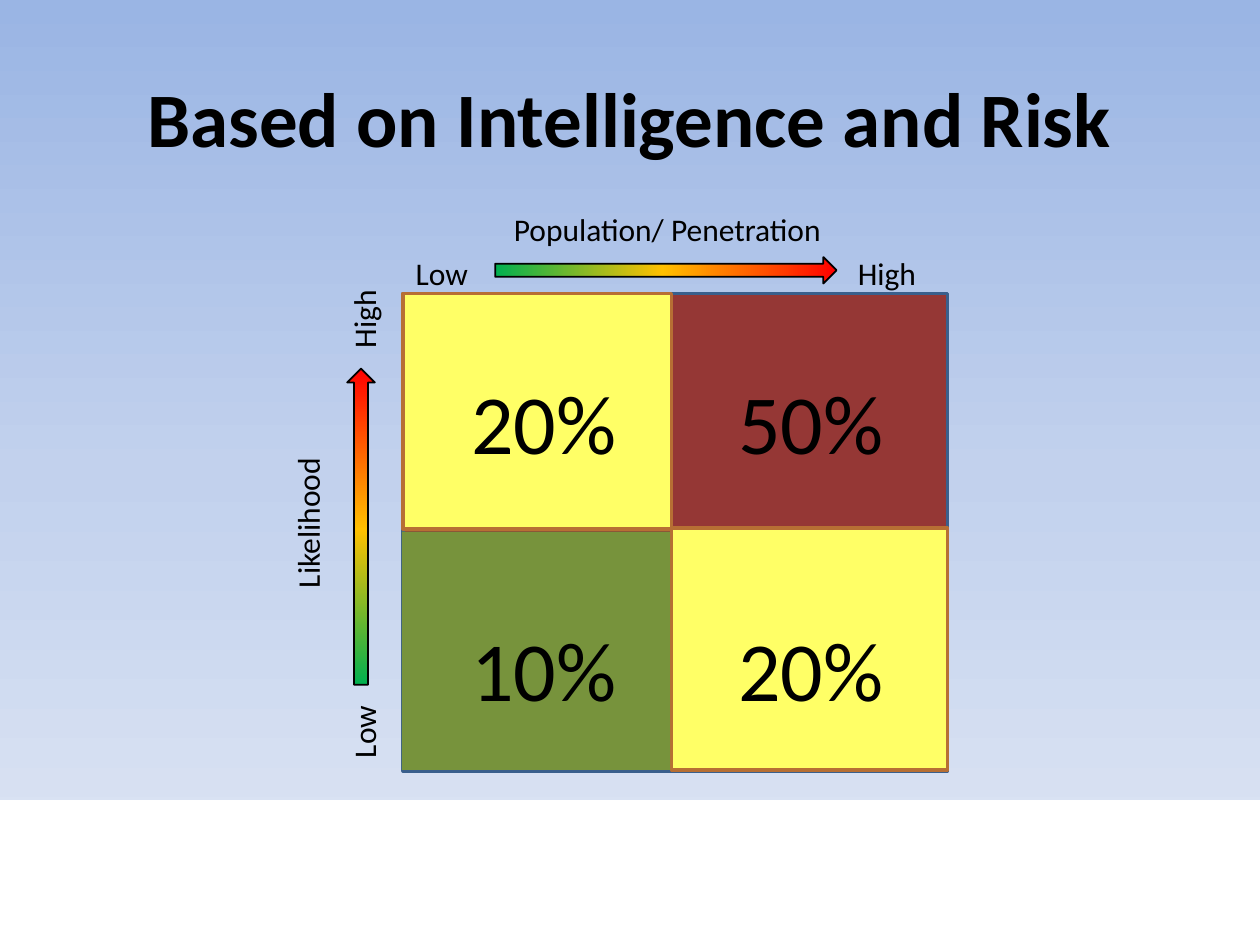
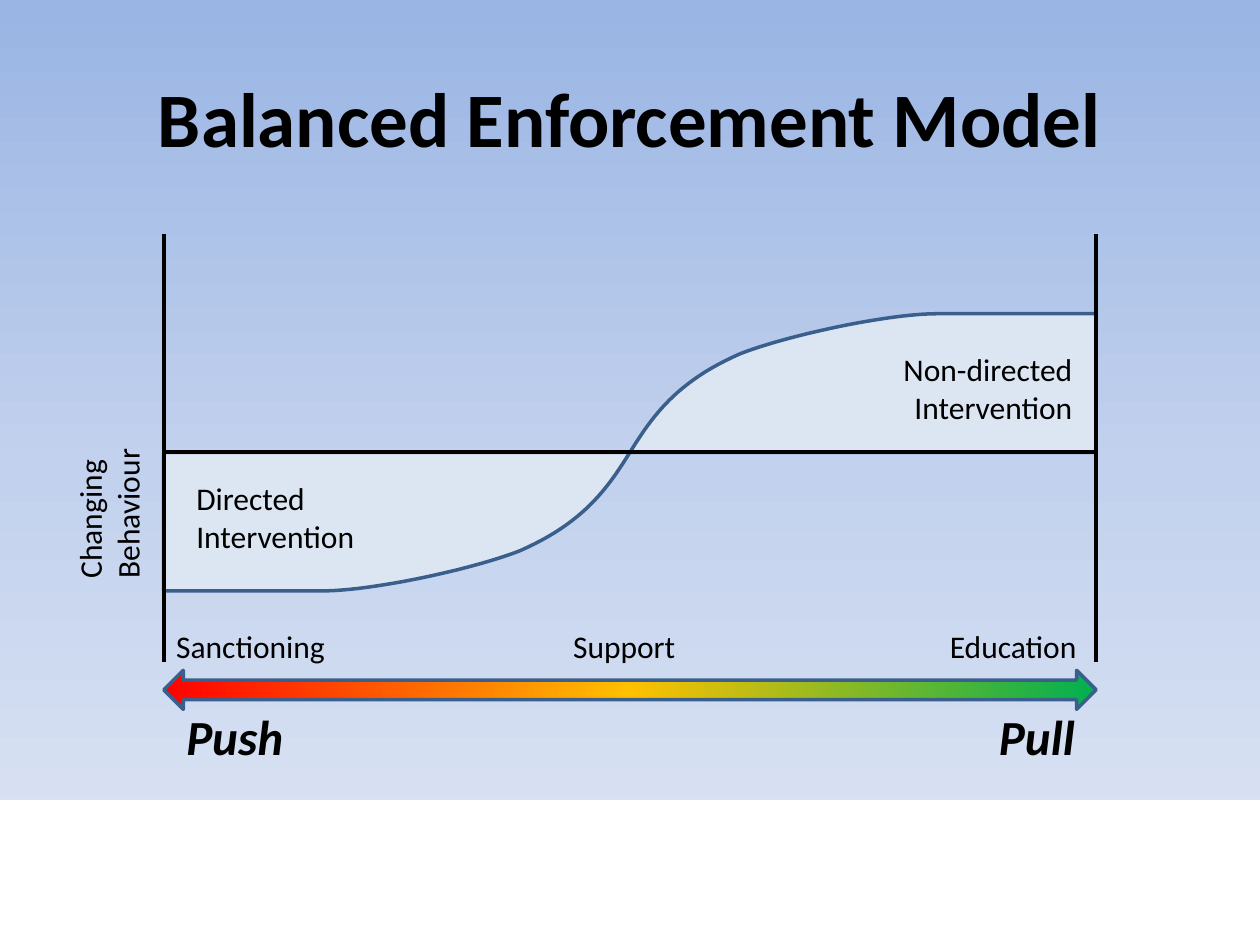
import dataclasses

import lxml.etree
import pptx
import pptx.dml.color
import pptx.enum.shapes
import pptx.enum.text
import pptx.oxml.ns
import pptx.util

Inches = pptx.util.Inches
Pt = pptx.util.Pt
qn = pptx.oxml.ns.qn
Kind = pptx.enum.shapes.MSO_SHAPE
Align = pptx.enum.text.PP_ALIGN


@dataclasses.dataclass(frozen=True)
class Theme:
    font: str = "Calibri"
    ink: str = "000000"
    white: str = "FFFFFF"
    blue: str = "3A5F8C"
    pale: str = "DCE6F2"
    rust: str = "B76F34"
    maroon: str = "953735"
    yellow: str = "FFFF66"
    olive: str = "77933C"
    sky: tuple = ((0, "9AB5E4"), (50, "C2D1ED"), (100, "E1E8F5"))
    rise: tuple = ((0, "00B050"), (49, "FFC000"), (100, "FF0000"))
    fall: tuple = ((0, "FF0000"), (50, "FFC000"), (100, "00B050"))
    head: int = 44
    value: int = 48
    label: int = 18
    strong: int = 28
    edge: float = 2
    axis: float = 2.25


def tint(code):
    return pptx.dml.color.RGBColor.from_string(code)


def blend(fill, root, stops, angle=0):
    """Give fill, found under the element root, a linear gradient."""
    fill.gradient()
    ramp = root.find(".//" + qn("a:gsLst"))
    ramp[:] = []
    for place, code in stops:
        stop = lxml.etree.SubElement(ramp, qn("a:gs"), pos=str(place * 1000))
        lxml.etree.SubElement(stop, qn("a:srgbClr"), val=code)
    root.find(".//" + qn("a:lin")).set("ang", str(angle * 60000))


def bezier(start, first, second, end, steps=24):
    """Return points along a cubic curve, without its start."""
    points = []
    for step in range(1, steps + 1):
        t = step / steps
        u = 1 - t
        parts = (u ** 3, 3 * u * u * t, 3 * u * t * t, t ** 3)
        knots = (start, first, second, end)
        points.append(tuple(sum(w * k[axis] for w, k in zip(parts, knots))
                            for axis in (0, 1)))
    return points


class Deck:
    def __init__(self, theme):
        self.theme = theme
        self.show = pptx.Presentation()
        self.show.slide_width = Inches(10)
        self.show.slide_height = Inches(7.5)
        master = self.show.slide_master
        blend(master.background.fill, master.element, theme.sky, 90)
        self.slide = None

    def begin(self, title):
        """Start a slide with its white foot band and title."""
        theme = self.theme
        self.slide = self.show.slides.add_slide(self.show.slide_layouts[5])
        self.shape(Kind.RECTANGLE, (0, 6.35, 10, 1.15), theme.white)
        box = self.slide.shapes.title
        box.left, box.top, box.width, box.height = map(
            Inches, (0.5, 0.3, 9, 1.25))
        box.text_frame.vertical_anchor = pptx.enum.text.MSO_ANCHOR.MIDDLE
        self.letter(box, title, theme.head, Align.CENTER, bold=True)

    def letter(self, box, text, size, align, bold=False, italic=False):
        """Put styled text in a box."""
        box.text_frame.text = text
        for line in box.text_frame.paragraphs:
            line.alignment = align
            font = line.font
            font.name, font.size = self.theme.font, Pt(size)
            font.bold, font.italic = bold, italic
            font.color.rgb = tint(self.theme.ink)

    def text(self, text, at, size=None, align=Align.LEFT, wrap=True,
             turn=0, upward=False, strong=False):
        box = self.slide.shapes.add_textbox(*map(Inches, at))
        box.rotation = turn
        frame = box.text_frame
        frame.word_wrap = wrap
        frame.auto_size = pptx.enum.text.MSO_AUTO_SIZE.SHAPE_TO_FIT_TEXT
        if upward:
            box.element.find(".//" + qn("a:bodyPr")).set("vert", "vert270")
        self.letter(box, text, size or self.theme.label, align, strong, strong)

    def paint(self, shape, fill, line, width):
        """Fill with a colour or with gradient stops, then outline."""
        shape.shadow.inherit = False
        if isinstance(fill, str):
            shape.fill.solid()
            shape.fill.fore_color.rgb = tint(fill)
        else:
            blend(shape.fill, shape.element, fill)
        if line:
            shape.line.color.rgb = tint(line)
            shape.line.width = Pt(width)
        else:
            shape.line.fill.background()

    def shape(self, kind, at, fill, line=None, width=None, turn=0):
        shape = self.slide.shapes.add_shape(kind, *map(Inches, at))
        shape.rotation = turn
        self.paint(shape, fill, line, width or self.theme.edge)

    def form(self, points, fill, line):
        spots = [(Inches(x), Inches(y)) for x, y in points]
        pen = self.slide.shapes.build_freeform(*spots[0])
        pen.add_line_segments(spots[1:], close=True)
        self.paint(pen.convert_to_shape(), fill, line, self.theme.edge)

    def line(self, start, end):
        line = self.slide.shapes.add_connector(
            pptx.enum.shapes.MSO_CONNECTOR.STRAIGHT,
            *map(Inches, start + end))
        line.line.color.rgb = tint(self.theme.ink)
        line.line.width = Pt(self.theme.axis)
        lxml.etree.SubElement(line.element.spPr, qn("a:effectLst"))


def risk(deck):
    theme = deck.theme
    deck.begin("Based on Intelligence and Risk")
    for at, fill, line in (
            ((3.2, 2.33, 4.32, 3.79), theme.maroon, theme.blue),
            ((3.2, 2.33, 2.13, 1.87), theme.yellow, theme.rust),
            ((5.33, 4.19, 2.19, 1.92), theme.yellow, theme.rust),
            ((3.19, 4.22, 2.13, 1.89), theme.olive, None)):
        deck.shape(Kind.RECTANGLE, at, fill, line)
    for top, row in ((2.89, ("20%", "50%")), (4.85, ("10%", "20%"))):
        for left, share in zip((3.64, 5.76), row):
            deck.text(share, (left, top, 1.37, 0.81), theme.value)

    deck.text("Population/ Penetration", (3.98, 1.62, 2.83, 0.4))
    deck.text("Likelihood", (1.24, 3.96, 2.38, 0.38),
              align=Align.CENTER, turn=270)
    for word, left, top in (("Low", 3.2, 5.55), ("High", 6.71, 2.3)):
        deck.text(word, (left, 1.97, 0.81, 0.36))
        deck.text(word, (2.5, top, 0.75, 0.38), turn=270)
    for at, turn in (((3.93, 2.04, 2.71, 0.21), 0),
                     ((1.61, 4.07, 2.51, 0.22), 270)):
        deck.shape(Kind.RIGHT_ARROW, at, theme.rise, theme.ink, 1, turn)


def model(deck):
    theme = deck.theme
    left, mid, right, level = 1.3, 5, 8.7, 3.59
    deck.begin("Balanced Enforcement Model")

    bend, crest = (5.87, 2.81), (7.44, 2.49)
    upper = [(right, level), (mid, level)]
    upper += bezier((mid, level), (5.18, 3.3), (5.37, 3.03), bend)
    upper += bezier(bend, (6.25, 2.66), (7.05, 2.49), crest)
    upper.append((right, 2.49))
    lower = [(2 * mid - x, 2 * level - y) for x, y in upper]
    for wave in (lower, upper):
        deck.form(wave, theme.pale, theme.blue)

    deck.line((left, level), (right, level))
    for side in (left, right):
        deck.line((side, 5.25), (side, 1.86))
    for word, start, width in (("Sanctioning", 1.3, 1.4),
                               ("Support", 4.45, 1.02),
                               ("Education", 7.44, 1.22)):
        deck.text(word, (start, 4.93, width, 0.4), wrap=False)
    deck.shape(Kind.LEFT_RIGHT_ARROW, (left, 5.32, right - left, 0.31),
               theme.fall, theme.blue)
    for word, start, width in (("Push", 1.38, 0.99), ("Pull", 7.83, 0.81)):
        deck.text(word, (start, 5.56, width, 0.57), theme.strong,
                  wrap=False, strong=True)
    deck.text("Directed\nIntervention", (1.46, 3.75, 1.47, 0.71), wrap=False)
    deck.text("Non-directed\nIntervention", (7.05, 2.73, 1.56, 0.71),
              align=Align.RIGHT, wrap=False)
    deck.text("Changing Behaviour", (0.51, 2.49, 0.5, 2.2), upward=True)


def main():
    deck = Deck(Theme())
    risk(deck)
    model(deck)
    deck.show.save("out.pptx")


if __name__ == "__main__":
    main()
